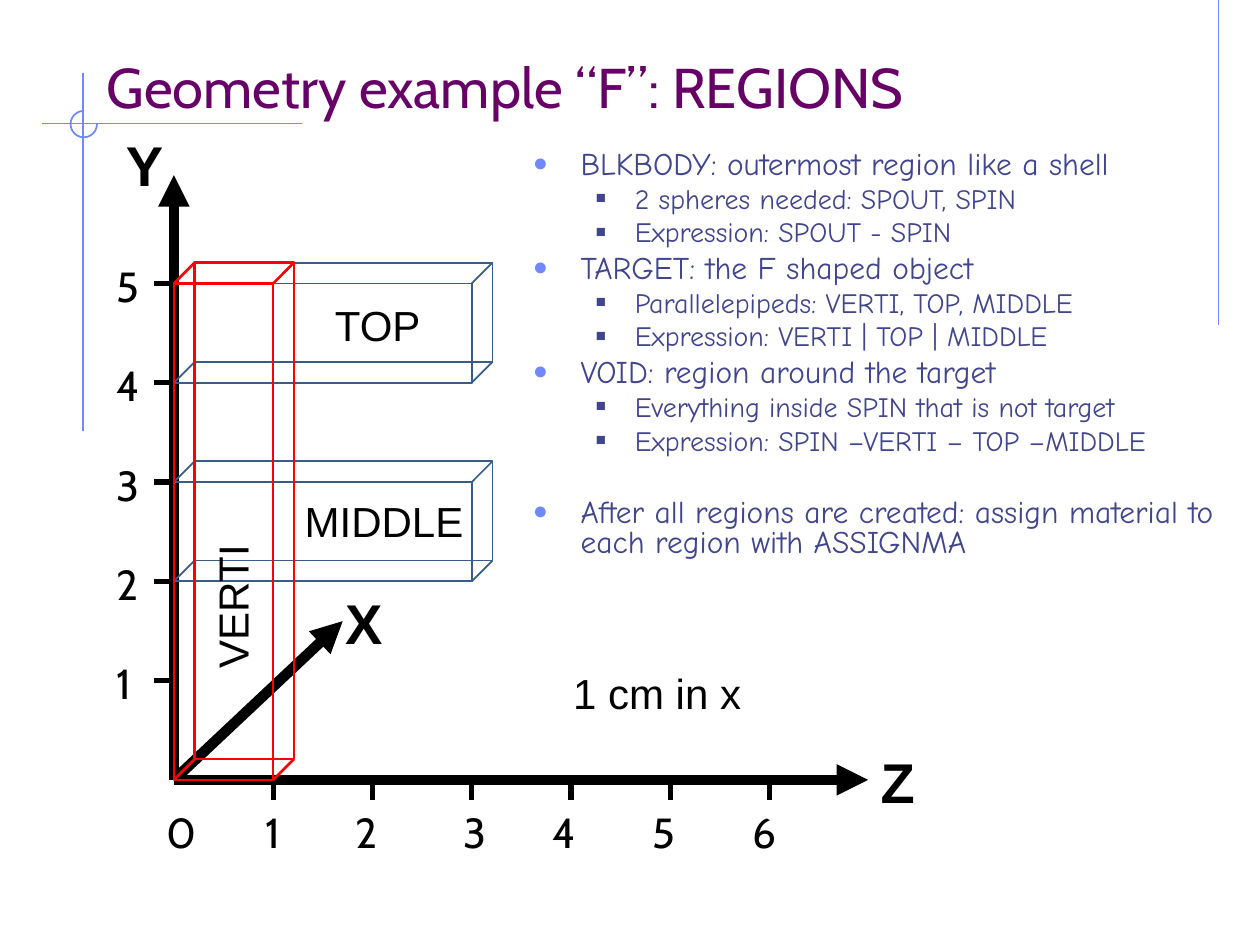
from lxml import etree
from pptx import Presentation
from pptx.dml.color import RGBColor
from pptx.enum.shapes import MSO_CONNECTOR, MSO_SHAPE
from pptx.enum.text import MSO_ANCHOR
from pptx.oxml.ns import qn
from pptx.util import Inches, Pt

STRAIGHT = MSO_CONNECTOR.STRAIGHT
RECTANGLE, ARC = MSO_SHAPE.RECTANGLE, MSO_SHAPE.ARC
TOP, BOTTOM = MSO_ANCHOR.TOP, MSO_ANCHOR.BOTTOM

BLACK, RED, STEEL = "000000", "FF0000", "385D8A"
ACCENT, PURPLE, INDIGO = "6F89F7", "660066", "40458C"
SANS, HEADING, HAND = "Arial", "Cabin", "Comic Neue"

# bullet, bullet colour, bullet size %, text size, space before, left, hanging
LEVELS = [("●", ACCENT, 80, 18, 4.1, 0.38, 0.38),
          ("■", INDIGO, 60, 16, 3.7, 0.81, 0.31)]
SECTION_GAP = 24.5

REGIONS = [
    ("BLKBODY: outermost region like a shell",
     ["2 spheres needed: SPOUT, SPIN", "Expression: SPOUT - SPIN"]),
    ("TARGET: the F shaped object",
     ["Parallelepipeds: VERTI, TOP, MIDDLE",
      "Expression: VERTI | TOP | MIDDLE"]),
    ("VOID: region around the target",
     ["Everything inside SPIN that is not target",
      "Expression: SPIN –VERTI – TOP –MIDDLE"]),
]
CLOSING = ("After all regions are created: assign material to "
           "each region with ASSIGNMA")

UNIT = 3.94 / 5     # one centimetre of the drawing, in inches
DEPTH = 0.165       # shift of a block's rear face, right and up
TICK = 0.16


def color(hex_code):
    return RGBColor.from_string(hex_code)


def add_line(slide, start, end, line_color, width, arrow=False):
    line = slide.shapes.add_connector(
        STRAIGHT, *(Inches(v) for v in (*start, *end)))
    line.line.color.rgb = color(line_color)
    line.line.width = Pt(width)
    if arrow:
        etree.SubElement(line.line._get_or_add_ln(), qn("a:tailEnd"),
                         type="triangle")
    etree.SubElement(line._element.spPr, qn("a:effectLst"))


def add_outline(slide, preset, box, line_color, width):
    outline = slide.shapes.add_shape(preset, *(Inches(v) for v in box))
    outline.shadow.inherit = False
    outline.fill.background()
    outline.line.color.rgb = color(line_color)
    outline.line.width = Pt(width)
    return outline


def add_frame(slide, box, anchor=TOP):
    holder = slide.shapes.add_textbox(*(Inches(v) for v in box))
    holder.text_frame.word_wrap = True
    holder.text_frame.vertical_anchor = anchor
    return holder


def add_run(paragraph, text, size, font, text_color, bold=False):
    run = paragraph.add_run()
    run.text = text
    run.font.size = Pt(size)
    run.font.name = font
    run.font.bold = bold
    run.font.color.rgb = color(text_color)


def add_label(slide, text, box, size=24, font=SANS, bold=False, rotation=0):
    label = add_frame(slide, box)
    label.rotation = rotation
    add_run(label.text_frame.paragraphs[0], text, size, font, BLACK, bold)


def set_bullet(paragraph, level):
    mark, mark_color, percent, _, _, left, hanging = LEVELS[level]
    props = paragraph._p.get_or_add_pPr()
    props.set("marL", str(Inches(left)))
    props.set("indent", str(-Inches(hanging)))
    bullet_color = etree.SubElement(props, qn("a:buClr"))
    etree.SubElement(bullet_color, qn("a:srgbClr"), val=mark_color)
    etree.SubElement(props, qn("a:buSzPct"), val=str(percent * 1000))
    etree.SubElement(props, qn("a:buFont"), typeface=SANS)
    etree.SubElement(props, qn("a:buChar"), char=mark)


def add_decoration(slide, x, y):
    """Corner cross centred on x, y and the rule at the right edge."""
    add_line(slide, (9.67, 0), (9.67, 2.58), ACCENT, 1)
    add_line(slide, (x + 1.74, y), (x - 0.33, y), ACCENT, 1)
    add_line(slide, (x, y - 0.4), (x, y + 2.44), ACCENT, 1)
    ring = add_outline(slide, ARC, (x - 0.1, y - 0.1, 0.21, 0.21), ACCENT, 1)
    ring.adjustments[0] = 0
    ring.adjustments[1] = 162   # 270 degrees


def add_title(slide, box):
    title = add_frame(slide, box, BOTTOM)
    add_run(title.text_frame.paragraphs[0], "Geometry example “F”: REGIONS",
            32, HEADING, PURPLE)


def add_region_list(slide, box):
    frame = add_frame(slide, box).text_frame
    items = []
    for region, details in REGIONS:
        items += [(region, 0), *((detail, 1) for detail in details)]
    items.append((CLOSING, 0))
    for index, (text, level) in enumerate(items):
        paragraph = frame.add_paragraph() if index else frame.paragraphs[0]
        size, gap = LEVELS[level][3:5]
        paragraph.level = level
        paragraph.line_spacing = 0.8
        paragraph.space_before = Pt(SECTION_GAP if text == CLOSING else gap)
        set_bullet(paragraph, level)
        add_run(paragraph, text, size, HAND, INDIGO)


def add_block(slide, box, line_color, width):
    """Wireframe block whose front face is box."""
    x, y, w, h = box
    add_outline(slide, RECTANGLE, (x + DEPTH, y - DEPTH, w, h),
                line_color, width)
    for corner_x in (x, x + w):
        for corner_y in (y, y + h):
            add_line(slide, (corner_x, corner_y),
                     (corner_x + DEPTH, corner_y - DEPTH), line_color, width)
    add_outline(slide, RECTANGLE, box, line_color, width)


def add_axes(slide, x, y):
    """Axes with ticks and numbers, with the origin at x, y."""
    tips = [("X", (1.34, -1.26), (1.26, -1.57)),
            ("Z", (5.51, 0), (5.51, -0.31)),
            ("Y", (0, -4.8), (-0.48, -5.2))]
    for name, (tip_x, tip_y), (name_x, name_y) in tips:
        add_line(slide, (x, y), (x + tip_x, y + tip_y), BLACK, 6, arrow=True)
        add_label(slide, name, (x + name_x, y + name_y, 0.63, 0.63),
                  32, bold=True)

    z_number_offsets = [-0.16, 0.63, 1.34, 2.2, 2.91, 3.7, 4.49]
    for number, offset in enumerate(z_number_offsets):
        add_label(slide, str(number), (x + offset, y + TICK, 0.39, 0.5),
                  font=HEADING)
        if number:
            tick_x = x + number * UNIT
            add_line(slide, (tick_x, y), (tick_x, y + TICK), BLACK, 3)

    for number in range(1, 6):
        tick_y = y - number * UNIT
        add_line(slide, (x, tick_y), (x - TICK, tick_y), BLACK, 3)
        add_label(slide, str(number), (x - 0.55, tick_y - 0.23, 0.39, 0.5),
                  font=HEADING)


def add_f_drawing(slide, x, y):
    """The F made of three blocks, with the origin of its axes at x, y."""
    add_axes(slide, x, y)
    for top in (5, 3):
        add_block(slide, (x, y - top * UNIT, 3 * UNIT, UNIT), STEEL, 1)
    add_block(slide, (x, y - 5 * UNIT, UNIT, 5 * UNIT), RED, 1.5)
    add_label(slide, "TOP", (x + 1.18, y - 3.86, 0.94, 0.5))
    add_label(slide, "MIDDLE", (x + 0.94, y - 2.31, 1.73, 0.5))
    add_label(slide, "VERTI", (x - 0.17, y - 1.67, 1.26, 0.5), rotation=270)
    add_label(slide, "1 cm in x", (x + 3.07, y - 0.94, 2.2, 0.5))


def main():
    deck = Presentation()
    deck.slide_width, deck.slide_height = Inches(10), Inches(7.5)
    slide = deck.slides.add_slide(deck.slide_layouts[6])
    add_decoration(slide, 0.66, 0.98)
    add_title(slide, (0.75, 0.33, 8.5, 0.67))
    add_region_list(slide, (4.13, 1.15, 5.75, 3.7))
    add_f_drawing(slide, 1.38, 6.19)
    deck.save("out.pptx")


if __name__ == "__main__":
    main()
